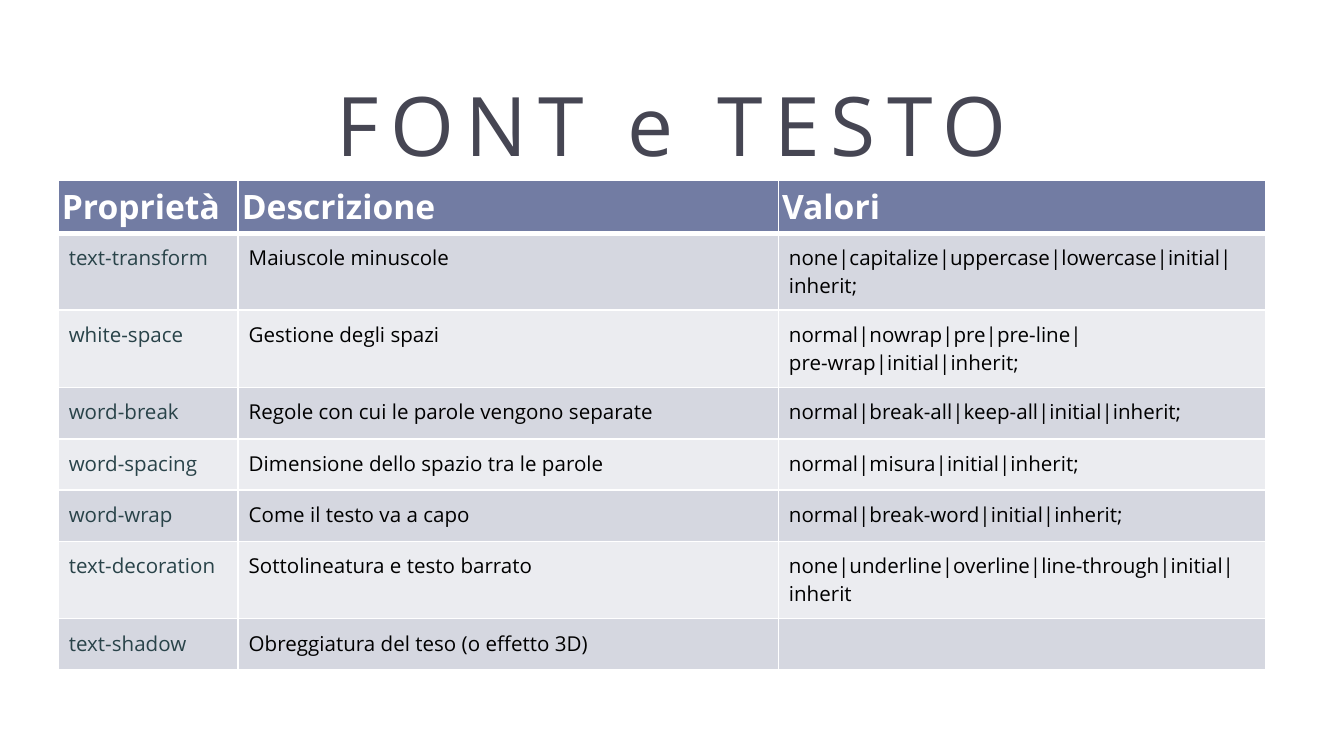
from dataclasses import dataclass

from lxml import etree
from pptx import Presentation
from pptx.dml.color import RGBColor
from pptx.enum.text import MSO_ANCHOR, MSO_AUTO_SIZE, PP_ALIGN
from pptx.oxml.ns import qn
from pptx.util import Cm, Pt

MIDDLE = MSO_ANCHOR.MIDDLE
CENTER = PP_ALIGN.CENTER
NO_AUTOFIT = MSO_AUTO_SIZE.NONE
TITLE_ONLY = 5


@dataclass(frozen=True)
class Theme:
    font: str = "Open Sans"
    title: str = "464653"
    header_fill: str = "727CA3"
    bands: tuple = ("D5D7E0", "EBECF0")
    white: str = "FFFFFF"
    property_text: str = "294349"
    body_text: str = "000000"
    title_size: int = 44
    header_size: int = 18
    body_size: int = 11
    title_spacing: int = 6
    thin_border: int = 1
    thick_border: int = 3


THEME = Theme()
HEADER = ("Proprietà", "Descrizione", "Valori")
PROPERTIES = (
    ("text-transform", "Maiuscole minuscole",
     "none|capitalize|uppercase|lowercase|initial| inherit;"),
    ("white-space", "Gestione degli spazi",
     "normal|nowrap|pre|pre-line|\npre-wrap|initial|inherit;"),
    ("word-break", "Regole con cui le parole vengono separate",
     "normal|break-all|keep-all|initial|inherit;"),
    ("word-spacing", "Dimensione dello spazio tra le parole",
     "normal|misura|initial|inherit;"),
    ("word-wrap", "Come il testo va a capo",
     "normal|break-word|initial|inherit;"),
    ("text-decoration", "Sottolineatura e testo barrato",
     "none|underline|overline|line-through|initial|inherit"),
    ("text-shadow", "Obreggiatura del teso (o effetto 3D)", ""),
)
COLUMN_WIDTHS = (Cm(3.4), Cm(10.21), Cm(9.22))
ROW_HEIGHT = Cm(0.97)


def format_text(frame, size, color, bold=False):
    for para in frame.paragraphs:
        for span in para.runs:
            span.font.name = THEME.font
            span.font.size = Pt(size)
            span.font.bold = bold
            span.font.color.rgb = RGBColor.from_string(color)
        if not para.runs:
            end = etree.SubElement(para._p, qn("a:endParaRPr"))
            end.set("sz", str(size * 100))


def add_title(page, text):
    title = page.shapes.title
    title.left, title.top = Cm(1.27), Cm(1.14)
    title.width, title.height = Cm(22.86), Cm(2.39)
    frame = title.text_frame
    frame.text = text
    frame.auto_size = NO_AUTOFIT
    frame.vertical_anchor = MIDDLE
    para = frame.paragraphs[0]
    para.alignment = CENTER
    format_text(frame, THEME.title_size, THEME.title)
    para.runs[0].font._element.set("spc", str(THEME.title_spacing * 100))


def set_borders(cell, top, bottom):
    thin = THEME.thin_border
    sides = (("a:lnL", thin), ("a:lnR", thin), ("a:lnT", top), ("a:lnB", bottom))
    properties = cell._tc.get_or_add_tcPr()
    for position, (tag, width) in enumerate(sides):
        line = etree.Element(qn(tag), w=str(Pt(width)))
        fill = etree.SubElement(line, qn("a:solidFill"))
        etree.SubElement(fill, qn("a:srgbClr"), val=THEME.white)
        properties.insert(position, line)


def fill_cell(cell, text, fill, size, color, margin, bold=False):
    cell.margin_left = cell.margin_right = margin
    cell.margin_top = cell.margin_bottom = margin
    cell.fill.solid()
    cell.fill.fore_color.rgb = RGBColor.from_string(fill)
    cell.text_frame.text = text
    format_text(cell.text_frame, size, color, bold)


def add_property_table(page):
    row_count = len(PROPERTIES) + 1
    table = page.shapes.add_table(
        row_count, len(HEADER), Cm(1.1), Cm(3.4),
        sum(COLUMN_WIDTHS), ROW_HEIGHT * row_count).table
    for column, width in zip(table.columns, COLUMN_WIDTHS):
        column.width = width
    for row in table.rows:
        row.height = ROW_HEIGHT

    for index, text in enumerate(HEADER):
        cell = table.cell(0, index)
        fill_cell(cell, text, THEME.header_fill, THEME.header_size,
                  THEME.white, Cm(0.07), bold=True)
        set_borders(cell, THEME.thin_border, THEME.thick_border)

    for row_index, texts in enumerate(PROPERTIES, start=1):
        band = THEME.bands[(row_index - 1) % 2]
        top = THEME.thick_border if row_index == 1 else THEME.thin_border
        for index, text in enumerate(texts):
            cell = table.cell(row_index, index)
            color = THEME.body_text if index else THEME.property_text
            fill_cell(cell, text, band, THEME.body_size, color, Cm(0.2))
            set_borders(cell, top, THEME.thin_border)


def main():
    deck = Presentation()
    deck.slide_width, deck.slide_height = Cm(25.4), Cm(14.29)
    page = deck.slides.add_slide(deck.slide_layouts[TITLE_ONLY])
    add_title(page, "FONT e TESTO")
    add_property_table(page)
    deck.save("out.pptx")


if __name__ == "__main__":
    main()
